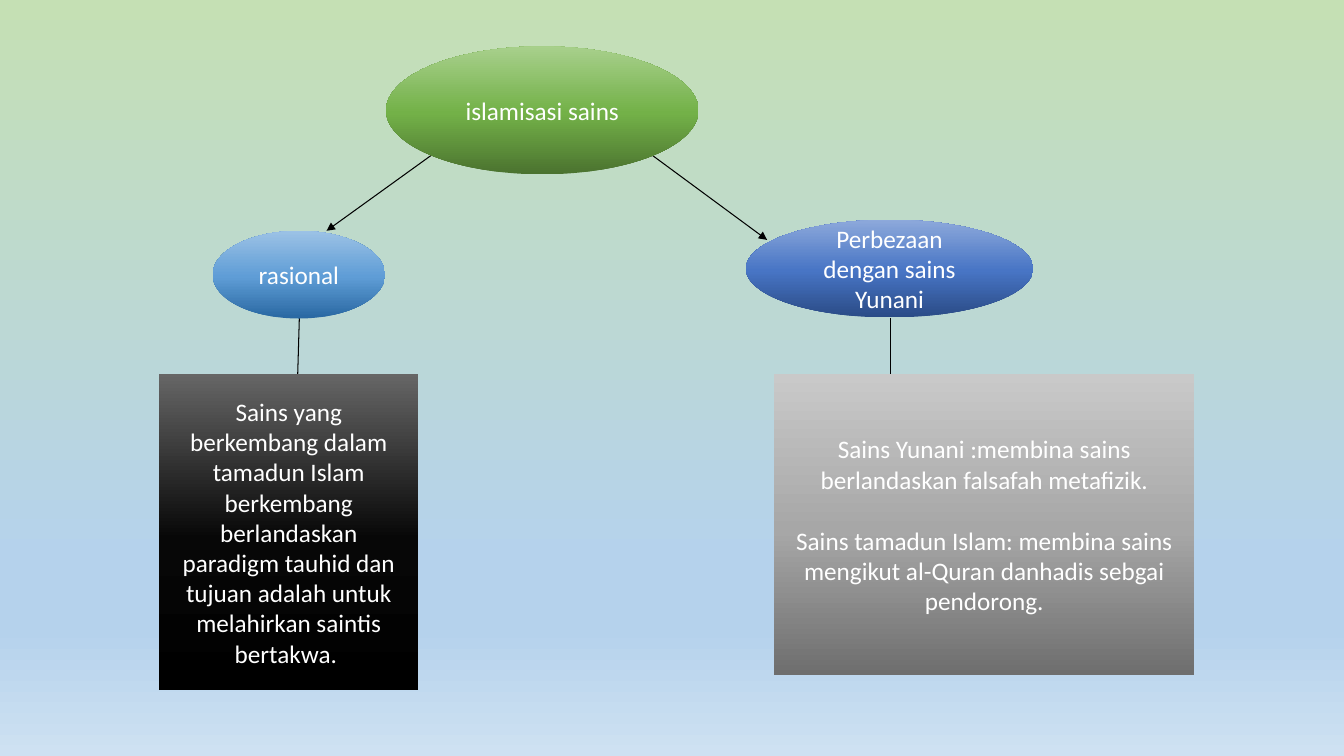
from dataclasses import dataclass

from lxml import etree
from pptx import Presentation, util as u
from pptx.dml.color import RGBColor
from pptx.enum import shapes, text
from pptx.oxml.ns import qn

CELL = u.Inches(0.1)  # the slide is a grid of 133.3 columns by 75 rows
COLUMNS, ROWS = 133.33, 75
OVAL = shapes.MSO_SHAPE.OVAL
BOX = shapes.MSO_SHAPE.RECTANGLE

Stops = tuple[tuple[int, str], ...]


def shaded(dark: str, middle: str, light: str) -> Stops:
    return (0, dark), (48, middle), (100, light)


@dataclass(frozen=True)
class Theme:
    font: str = "Calibri"
    size: u.Pt = u.Pt(18)
    paragraph_gap: u.Pt = u.Pt(22)
    line_width: u.Pt = u.Pt(0.75)
    text_colour: str = "FFFFFF"
    line_colour: str = "000000"
    background: Stops = ((0, "C5E0B4"), (74, "B5D2EC"), (83, "B5D2EC"), (100, "CEE1F2"))
    green: Stops = shaded("4B732F", "73B148", "A8D08C")
    sky: Stops = shaded("2968A2", "5F9DD6", "9CC2E5")
    blue: Stops = shaded("2A4B86", "4875C5", "8DA9DB")
    black: Stops = shaded("000000", "070707", "666666")
    grey: Stops = shaded("6E6E6E", "A7A7A7", "C9C9C9")


THEME = Theme()


@dataclass(frozen=True)
class Node:
    kind: shapes.MSO_SHAPE
    column: float
    row: float
    columns: float
    rows: float
    stops: Stops
    paragraphs: tuple[str, ...]


@dataclass(frozen=True)
class Link:
    start: tuple[float, float]
    end: tuple[float, float]
    arrow: bool = False


NODES = (
    Node(OVAL, 38.3, 4.6, 31, 12.7, THEME.green, ("islamisasi sains",)),
    Node(OVAL, 21.1, 22.9, 17.1, 8.7, THEME.sky, ("rasional",)),
    Node(OVAL, 74, 21.8, 28.5, 9.7, THEME.blue, ("Perbezaan dengan sains Yunani",)),
    Node(BOX, 15.8, 37.1, 25.7, 31.4, THEME.black, (
        "Sains yang berkembang dalam tamadun Islam berkembang berlandaskan "
        "paradigm tauhid dan tujuan adalah untuk melahirkan saintis bertakwa. ",
    )),
    Node(BOX, 76.8, 37.1, 41.7, 29.9, THEME.grey, (
        "Sains Yunani :membina sains berlandaskan falsafah metafizik.",
        "Sains tamadun Islam: membina sains mengikut al-Quran danhadis sebgai pendorong.",
    )),
)

LINKS = (
    Link((42.8, 15.4), (32.4, 22.9), arrow=True),
    Link((64.7, 15.4), (76.1, 23.8), arrow=True),
    Link((29.7, 31.5), (29.5, 38.3)),
    Link((88.3, 31.5), (88.3, 37.1)),
)


def grid(*cells: float) -> list[u.Emu]:
    return [u.Emu(round(count * CELL)) for count in cells]


def set_values(target: object, values: dict[str, object]) -> None:
    for name, value in values.items():
        setattr(target, name, value)


def fill_gradient(fill, root, stops: Stops, angle: int) -> None:
    """Fill with any number of stops; root is the element that holds the fill."""
    fill.gradient()
    fill.gradient_angle = angle
    stop_list = next(root.iter(qn("a:gsLst")))
    for old_stop in list(stop_list):
        stop_list.remove(old_stop)
    for percent, colour in stops:
        stop = etree.SubElement(stop_list, qn("a:gs"), pos=str(percent * 1000))
        etree.SubElement(stop, qn("a:srgbClr"), val=colour)


def draw_link(page, link: Link) -> None:
    line = page.shapes.add_connector(
        shapes.MSO_CONNECTOR.STRAIGHT, *grid(*link.start, *link.end))
    line.line.width = THEME.line_width
    line.line.color.rgb = RGBColor.from_string(THEME.line_colour)
    if link.arrow:
        etree.SubElement(line.line._get_or_add_ln(), qn("a:tailEnd"), type="triangle")
    etree.SubElement(line._element.spPr, qn("a:effectLst"))


def draw_node(page, node: Node) -> None:
    shape = page.shapes.add_shape(
        node.kind, *grid(node.column, node.row, node.columns, node.rows))
    shape.shadow.inherit = False
    shape.line.fill.background()
    fill_gradient(shape.fill, shape._element, node.stops, angle=90)
    frame = shape.text_frame
    set_values(frame, {"word_wrap": True, "vertical_anchor": text.MSO_ANCHOR.MIDDLE})
    for index, words in enumerate(node.paragraphs):
        para = frame.add_paragraph() if index else frame.paragraphs[0]
        set_values(para, {
            "alignment": text.PP_ALIGN.CENTER,
            "space_before": THEME.paragraph_gap if index else u.Pt(0),
        })
        span = para.add_run()
        span.text = words
        set_values(span.font, {"name": THEME.font, "size": THEME.size})
        span.font.color.rgb = RGBColor.from_string(THEME.text_colour)


def main() -> None:
    deck = Presentation()
    deck.slide_width, deck.slide_height = grid(COLUMNS, ROWS)
    page = deck.slides.add_slide(deck.slide_layouts[6])
    fill_gradient(page.background.fill, page._element, THEME.background, angle=270)
    for link in LINKS:
        draw_link(page, link)
    for node in NODES:
        draw_node(page, node)
    deck.save("out.pptx")


if __name__ == "__main__":
    main()
